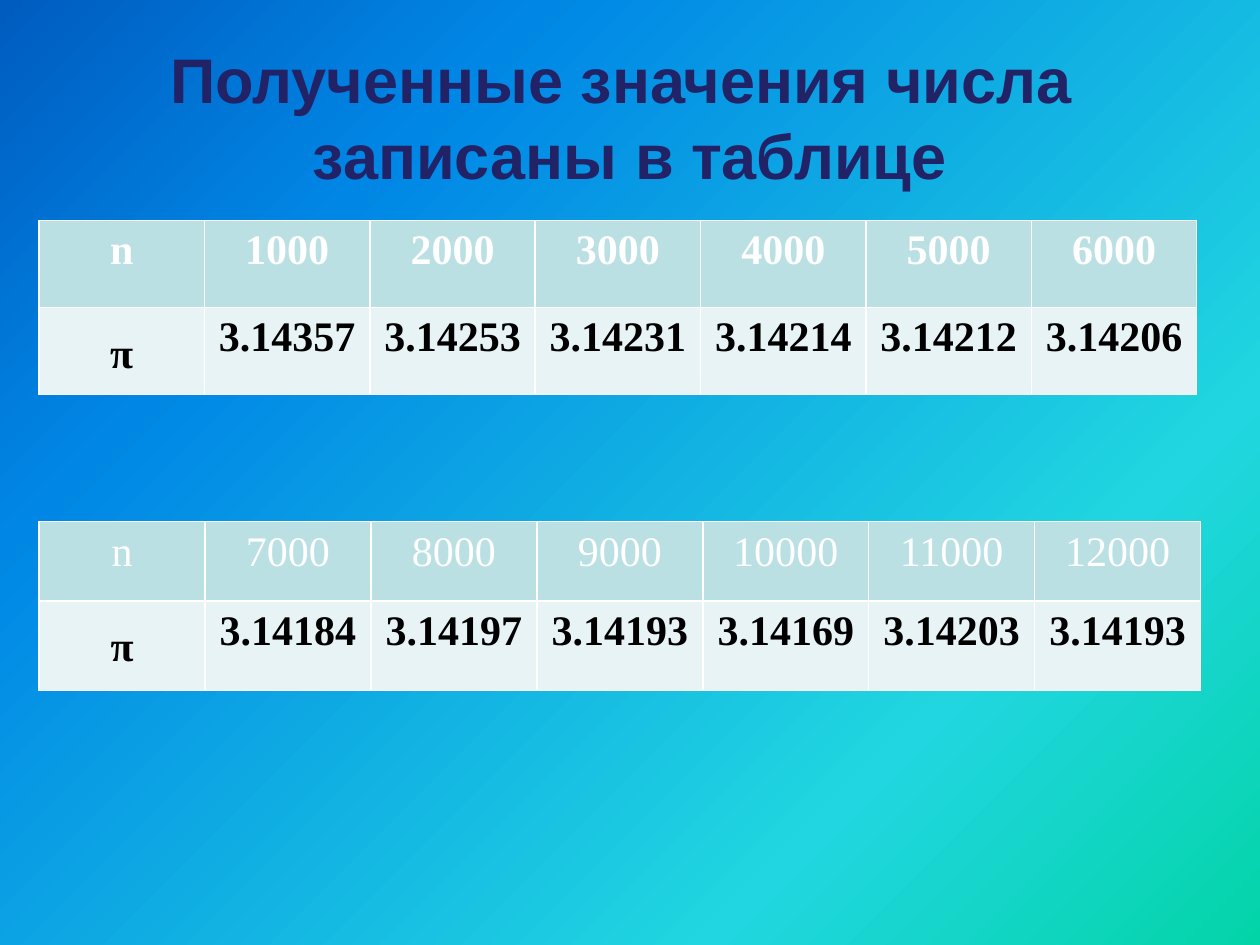
import pptx
import pptx.dml.color
import pptx.enum.text
import pptx.oxml.ns
import pptx.util
from lxml import etree

Inches = pptx.util.Inches
Pt = pptx.util.Pt
RGBColor = pptx.dml.color.RGBColor
qn = pptx.oxml.ns.qn
CENTER = pptx.enum.text.PP_ALIGN.CENTER
MIDDLE = pptx.enum.text.MSO_ANCHOR.MIDDLE

NAVY = RGBColor(0x22, 0x22, 0x67)
WHITE = RGBColor(0xFF, 0xFF, 0xFF)
BLACK = RGBColor(0x00, 0x00, 0x00)
HEADER_FILL = RGBColor(0xBB, 0xE0, 0xE3)
VALUE_FILL = RGBColor(0xE7, 0xF3, 0xF4)
BACKGROUND_STOPS = [
    (0, RGBColor(0x03, 0xD4, 0xA8)),
    (25, RGBColor(0x21, 0xD6, 0xE0)),
    (75, RGBColor(0x00, 0x87, 0xE6)),
    (100, RGBColor(0x00, 0x5C, 0xBF)),
]

TITLE_FONT = {"name": "Arial", "size": Pt(36), "bold": True}
CELL_FONT = {"name": "Times New Roman", "size": Pt(24)}
CELL_FORMAT = {
    "margin_left": Inches(0.07),
    "margin_right": Inches(0.07),
    "margin_top": 0,
    "margin_bottom": 0,
}


def set_attributes(obj, values):
    for name, value in values.items():
        setattr(obj, name, value)


def add_solid_fill(parent, color):
    fill = etree.SubElement(parent, qn("a:solidFill"))
    etree.SubElement(fill, qn("a:srgbClr"), val=str(color))


def set_background(s):
    """Run the gradient from the bottom right corner to the top left."""
    fill = s.background.fill
    fill.gradient()
    fill.gradient_angle = 135
    stops = s.element.find(".//" + qn("a:gsLst"))
    for stop in list(stops):
        stops.remove(stop)
    for percent, color in BACKGROUND_STOPS:
        stop = etree.SubElement(stops, qn("a:gs"), pos=str(percent * 1000))
        etree.SubElement(stop, qn("a:srgbClr"), val=str(color))


def write_text(p, text, font, color):
    p.alignment = CENTER
    r = p.add_run()
    r.text = text
    set_attributes(r.font, font)
    r.font.color.rgb = color


def add_title(s, text):
    sp = s.shapes.title
    set_attributes(sp, {"left": Inches(0.5), "top": Inches(0.3),
                        "width": Inches(9), "height": Inches(1.25)})
    tf = sp.text_frame
    set_attributes(tf, {"word_wrap": True, "vertical_anchor": MIDDLE})
    write_text(tf.paragraphs[0], text, TITLE_FONT, NAVY)


def set_borders(cell):
    """Draw white one-point lines; they must precede the fill in tcPr."""
    tc_pr = cell._tc.get_or_add_tcPr()
    for side in ("a:lnL", "a:lnR", "a:lnT", "a:lnB"):
        line = etree.SubElement(tc_pr, qn(side), w=str(Pt(1)))
        add_solid_fill(line, WHITE)


def fill_cell(cell, text, fill, color, bold, spacing):
    set_attributes(cell, CELL_FORMAT)
    set_borders(cell)
    cell.fill.solid()
    cell.fill.fore_color.rgb = fill
    p = cell.text_frame.paragraphs[0]
    p.line_spacing = spacing
    write_text(p, text, {**CELL_FONT, "bold": bold}, color)


def add_pi_table(s, top, width, heights, values, header_bold):
    """Put the counts n in the header row and the values of π below them."""
    columns = [("n", "π"), *values]
    frame = s.shapes.add_table(2, len(columns), Inches(0.31), Inches(top),
                               Inches(width), Inches(sum(heights)))
    table = frame.table
    for row, height in zip(table.rows, heights):
        row.height = Inches(height)
    for i, (n, pi) in enumerate(columns):
        fill_cell(table.cell(0, i), n, HEADER_FILL, WHITE, header_bold, 1.15)
        fill_cell(table.cell(1, i), pi, VALUE_FILL, BLACK, True,
                  1.5 if i == 0 else 1.15)


def main():
    prs = pptx.Presentation()
    prs.slide_width = Inches(10)
    prs.slide_height = Inches(7.5)
    s = prs.slides.add_slide(prs.slide_layouts[5])
    set_background(s)
    add_title(s, "Полученные значения числа  записаны в таблице")
    add_pi_table(s, 1.75, 9.19, (0.69, 0.69), [
        ("1000", "3.14357"), ("2000", "3.14253"), ("3000", "3.14231"),
        ("4000", "3.14214"), ("5000", "3.14212"), ("6000", "3.14206"),
    ], header_bold=True)
    add_pi_table(s, 4.14, 9.22, (0.63, 0.71), [
        ("7000", "3.14184"), ("8000", "3.14197"), ("9000", "3.14193"),
        ("10000", "3.14169"), ("11000", "3.14203"), ("12000", "3.14193"),
    ], header_bold=False)
    prs.save("out.pptx")


if __name__ == "__main__":
    main()
